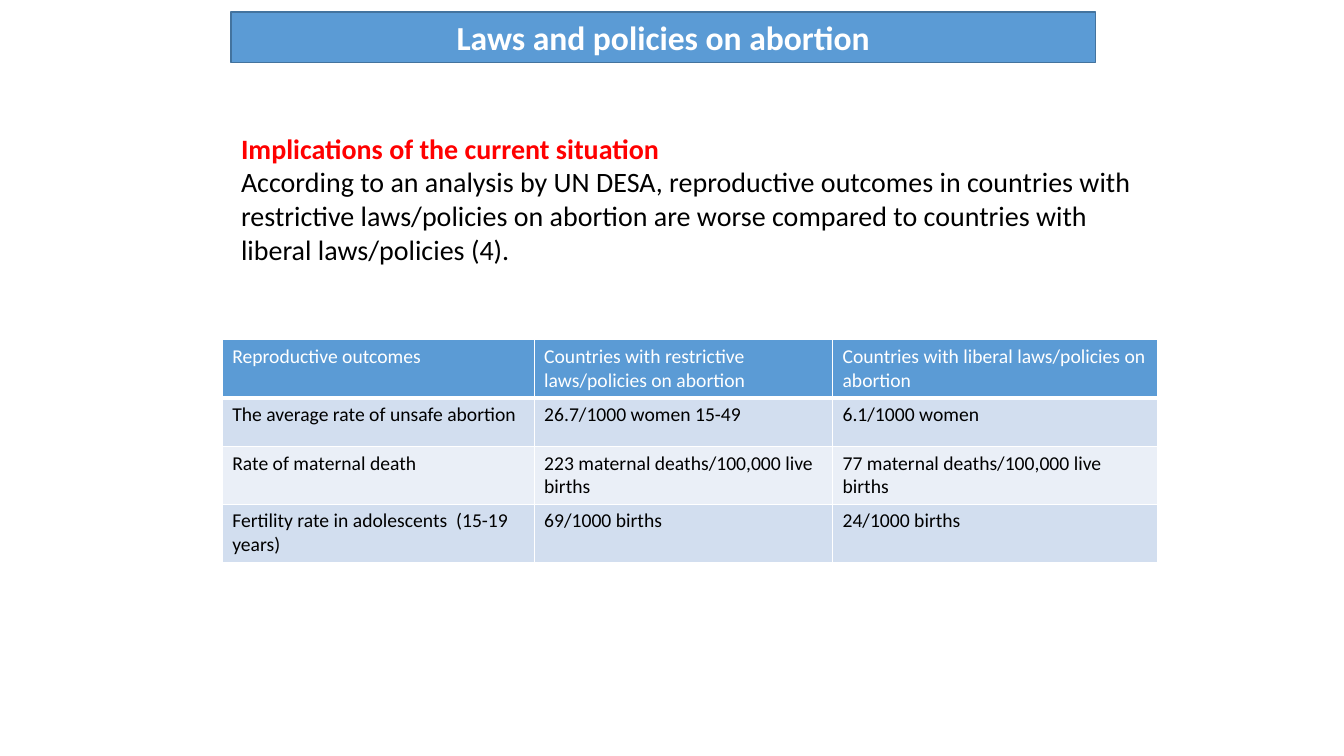
"""Build a slide on laws and policies on abortion with a table of outcomes."""
from lxml.etree import SubElement
from pptx import Presentation
from pptx.dml.color import RGBColor
from pptx.enum.text import MSO_ANCHOR as Anchor, MSO_AUTO_SIZE as AutoSize, PP_ALIGN as Align
from pptx.oxml import parse_xml
from pptx.oxml.ns import nsdecls, qn
from pptx.util import Cm, Pt

WHITE = RGBColor(0xFF, 0xFF, 0xFF)
BLACK = RGBColor(0, 0, 0)
RED = RGBColor(0xFF, 0, 0)
BLUE = RGBColor(0x5B, 0x9B, 0xD5)
DARK_BLUE = RGBColor(0x43, 0x73, 0x9E)
BAND_DARK = RGBColor(0xD2, 0xDE, 0xEF)
BAND_LIGHT = RGBColor(0xEA, 0xEF, 0xF7)


def place(box, left, top, width, height):
    box.left, box.top, box.width, box.height = Cm(left), Cm(top), Cm(width), Cm(height)


def style(paragraph, size, color, bold=False):
    font = paragraph.font
    font.name, font.size, font.bold = "Calibri", Pt(size), bold
    font.color.rgb = color


deck = Presentation()
deck.slide_width, deck.slide_height = Cm(33.87), Cm(19.05)
slide = deck.slides.add_slide(deck.slide_layouts[1])

heading = slide.shapes.title
place(heading, 5.82, 0.3, 21.79, 1.27)
heading.fill.solid()
heading.fill.fore_color.rgb = BLUE
heading.line.color.rgb = DARK_BLUE
heading.line.width = Pt(1)
heading.text_frame.text = "Laws and policies on abortion"
heading.text_frame.auto_size = AutoSize.NONE
heading.text_frame.vertical_anchor = Anchor.MIDDLE
heading.text_frame.paragraphs[0].alignment = Align.CENTER
style(heading.text_frame.paragraphs[0], 24, WHITE, bold=True)

implications = slide.placeholders[1]
place(implications, 5.82, 3.18, 23.14, 4.55)
implications.text_frame.auto_size = AutoSize.NONE
implications.text_frame.text = (
    "Implications of the current situation\n"
    "According to an analysis by UN DESA, reproductive outcomes in countries with "
    "restrictive laws/policies on abortion are worse compared to countries with "
    "liberal laws/policies (4)."
)
subheading, finding = implications.text_frame.paragraphs
style(subheading, 20, RED, bold=True)
style(finding, 20, BLACK)
for paragraph in (subheading, finding):
    paragraph.space_before = Pt(0)
    properties = paragraph._p.get_or_add_pPr()
    properties.set("marL", "0")
    properties.set("indent", "0")
    properties.insert_element_before(
        parse_xml(f"<a:buNone {nsdecls('a')}/>"), "a:tabLst", "a:defRPr", "a:extLst"
    )

outcomes = [
    ("Reproductive outcomes",
     "Countries with restrictive laws/policies on abortion",
     "Countries with liberal laws/policies on abortion"),
    ("The average rate of unsafe abortion", "26.7/1000 women 15-49", "6.1/1000 women"),
    ("Rate of maternal death",
     "223 maternal deaths/100,000 live births",
     "77 maternal deaths/100,000 live births"),
    ("Fertility rate in adolescents  (15-19 years)", "69/1000 births", "24/1000 births"),
]
column_widths = [7.86, 7.52, 8.18]
row_heights = [1.47, 1.22, 1.45, 1.45]
row_fills = [BLUE, BAND_DARK, BAND_LIGHT, BAND_DARK]

table = slide.shapes.add_table(
    len(outcomes), len(column_widths),
    Cm(5.6), Cm(8.56), Cm(sum(column_widths)), Cm(sum(row_heights)),
).table
for column, width in zip(table.columns, column_widths):
    column.width = Cm(width)

for row_index, texts in enumerate(outcomes):
    is_header = row_index == 0
    table.rows[row_index].height = Cm(row_heights[row_index])
    for column_index, text in enumerate(texts):
        cell = table.cell(row_index, column_index)
        cell.text = text
        style(cell.text_frame.paragraphs[0], 14, WHITE if is_header else BLACK)
        cell_properties = cell._tc.get_or_add_tcPr()
        for side in ("lnL", "lnR", "lnT", "lnB"):
            thick = is_header and side == "lnB" or row_index == 1 and side == "lnT"
            border = SubElement(cell_properties, qn(f"a:{side}"), w=str(Pt(3 if thick else 1)))
            border_fill = SubElement(border, qn("a:solidFill"))
            SubElement(border_fill, qn("a:srgbClr"), val=str(WHITE))
        cell.fill.solid()
        cell.fill.fore_color.rgb = row_fills[row_index]

deck.save("out.pptx")
